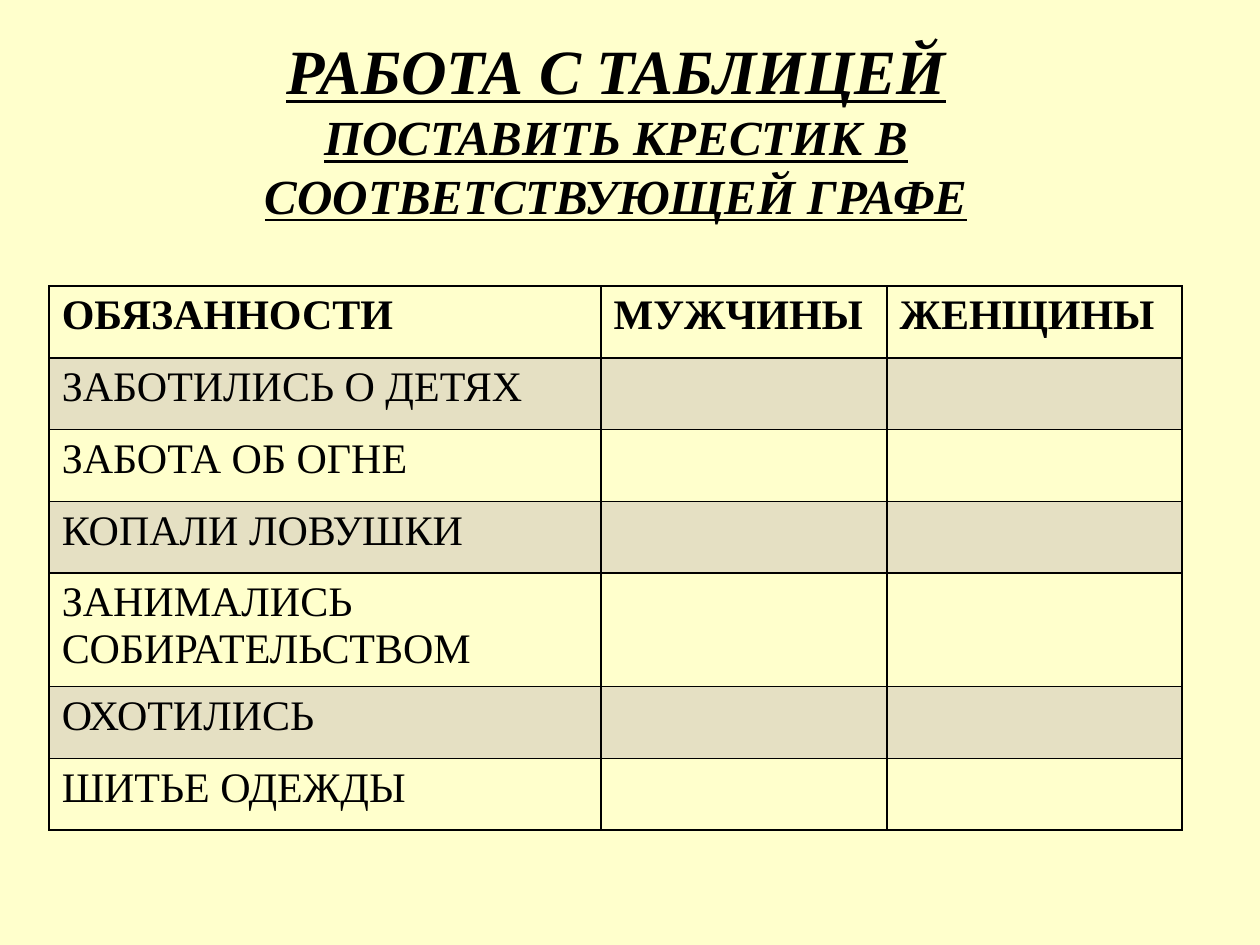
from lxml import etree
from pptx import Presentation
from pptx.dml.color import RGBColor
from pptx.enum import text
from pptx.oxml import ns
from pptx.util import Inches, Pt

FONT = "Times New Roman"
INK = "000000"
PAPER = "FFFFCC"
BAND = "8064A2"
DUTIES = [
    "ЗАБОТИЛИСЬ О ДЕТЯХ",
    "ЗАБОТА ОБ ОГНЕ",
    "КОПАЛИ ЛОВУШКИ",
    "ЗАНИМАЛИСЬ СОБИРАТЕЛЬСТВОМ",
    "ОХОТИЛИСЬ",
    "ШИТЬЕ ОДЕЖДЫ",
]
ROWS = [["ОБЯЗАННОСТИ", "МУЖЧИНЫ", "ЖЕНЩИНЫ"]] + [[duty, "", ""] for duty in DUTIES]
COLUMN_WIDTHS = [4.38, 2.27, 2.34]
ROW_HEIGHT = 0.57


def color(value):
    return RGBColor.from_string(value)


def style_font(font, size, bold):
    font.name = FONT
    font.size = Pt(size)
    font.bold = bold
    font.color.rgb = color(INK)


def add_title(slide, left, top, width, height):
    box = slide.shapes.add_textbox(Inches(left), Inches(top), Inches(width), Inches(height))
    frame = box.text_frame
    frame.word_wrap = True
    frame.vertical_anchor = text.MSO_ANCHOR.MIDDLE
    paragraph = frame.paragraphs[0]
    paragraph.alignment = text.PP_ALIGN.CENTER
    lines = [("РАБОТА С ТАБЛИЦЕЙ", 36), ("ПОСТАВИТЬ КРЕСТИК В СООТВЕТСТВУЮЩЕЙ ГРАФЕ", 28)]
    for index, (line, size) in enumerate(lines):
        if index:
            paragraph.add_line_break()
        run = paragraph.add_run()
        run.text = line
        style_font(run.font, size, True)
        run.font.italic = True
        run.font.underline = True


def add_borders(cell):
    properties = cell._tc.get_or_add_tcPr()
    for index, side in enumerate(("lnL", "lnR", "lnT", "lnB")):
        line = etree.Element(ns.qn(f"a:{side}"), w=str(Pt(1)))
        fill = etree.SubElement(line, ns.qn("a:solidFill"))
        etree.SubElement(fill, ns.qn("a:srgbClr"), val=INK)
        properties.insert(index, line)


def fill_cell(cell, banded):
    if not banded:
        cell.fill.background()
        return
    cell.fill.solid()
    cell.fill.fore_color.rgb = color(BAND)
    tint = cell._tc.tcPr.find(".//" + ns.qn("a:srgbClr"))
    etree.SubElement(tint, ns.qn("a:alpha"), val="20000")


def add_duties_table(slide, left, top):
    frame = slide.shapes.add_table(
        len(ROWS), len(COLUMN_WIDTHS), Inches(left), Inches(top),
        Inches(sum(COLUMN_WIDTHS)), Inches(ROW_HEIGHT * len(ROWS)))
    table = frame.table
    table.horz_banding = False
    for column, width in zip(table.columns, COLUMN_WIDTHS):
        column.width = Inches(width)
    for row_index, values in enumerate(ROWS):
        table.rows[row_index].height = Inches(ROW_HEIGHT)
        for column_index, value in enumerate(values):
            cell = table.cell(row_index, column_index)
            cell.text = value
            style_font(cell.text_frame.paragraphs[0].font, 24, row_index == 0)
            fill_cell(cell, row_index % 2 == 1)
            add_borders(cell)


def main():
    presentation = Presentation()
    presentation.slide_width = Inches(10)
    presentation.slide_height = Inches(7.5)
    slide = presentation.slides.add_slide(presentation.slide_layouts[6])
    slide.background.fill.solid()
    slide.background.fill.fore_color.rgb = color(PAPER)
    add_title(slide, 0.39, 0.39, 9, 1.25)
    add_duties_table(slide, 0.39, 2.27)
    presentation.save("out.pptx")


if __name__ == "__main__":
    main()
